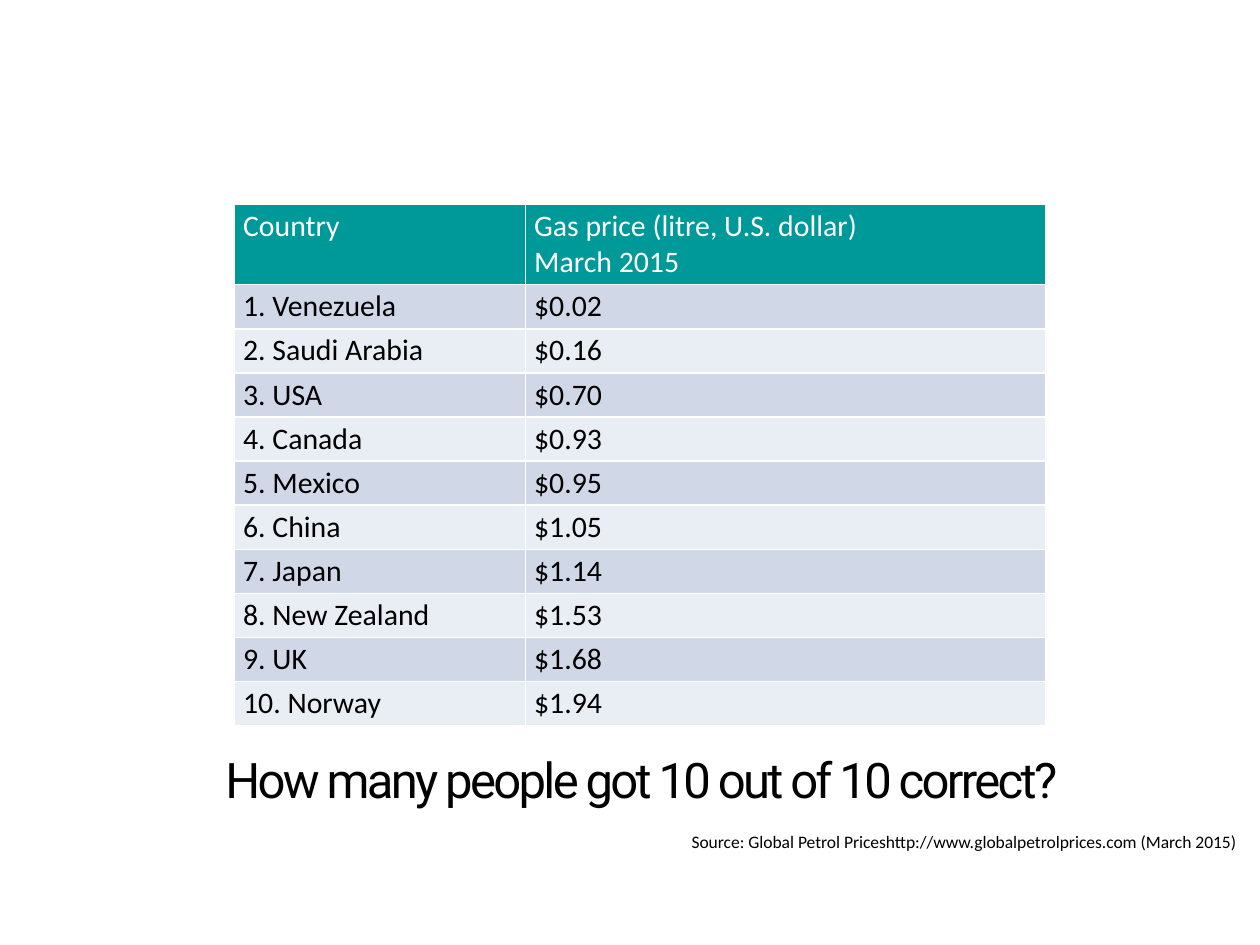
"""Build a slide with a table of gas prices by country, a question and a source line."""
import pptx
import pptx.dml.color
import pptx.enum.text
import pptx.util

PX = 9144
WHITE = pptx.dml.color.RGBColor(0xFF, 0xFF, 0xFF)
BLACK = pptx.dml.color.RGBColor(0x00, 0x00, 0x00)
TEAL = pptx.dml.color.RGBColor(0x00, 0x99, 0x99)
BANDS = [
    pptx.dml.color.RGBColor(0xE9, 0xED, 0xF4),
    pptx.dml.color.RGBColor(0xD0, 0xD8, 0xE8),
]
HEADER = ("Country", "Gas price (litre, U.S. dollar)\nMarch 2015")
PRICES = [
    ("Venezuela", "$0.02"),
    ("Saudi Arabia", "$0.16"),
    ("USA", "$0.70"),
    ("Canada", "$0.93"),
    ("Mexico", "$0.95"),
    ("China", "$1.05"),
    ("Japan", "$1.14"),
    ("New Zealand", "$1.53"),
    ("UK", "$1.68"),
    ("Norway", "$1.94"),
]
CELL_FORMAT = {
    "margin_left": 7 * PX,
    "margin_right": 7 * PX,
    "margin_top": 3 * PX,
    "margin_bottom": 3 * PX,
}


def style_span(span, name, size, color):
    values = {"name": name, "size": pptx.util.Pt(size), "bold": False}
    for key, value in values.items():
        setattr(span.font, key, value)
    span.font.color.rgb = color


def add_text(page, area, text, name, size):
    box = page.shapes.add_textbox(*[length * PX for length in area])
    box.text_frame.word_wrap = True
    para = box.text_frame.paragraphs[0]
    span = para.add_run()
    span.text = text
    style_span(span, name, size, BLACK)
    return box, para, span


deck = pptx.Presentation()
deck.slide_width = 1000 * PX
deck.slide_height = 750 * PX
page = deck.slides.add_slide(deck.slide_layouts[6])

box, para, span = add_text(
    page, (169, 592, 775, 76), "How many people got 10 out of 10 correct?", "Roboto", 28
)
para.line_spacing = pptx.util.Pt(32)
span.font._element.set("spc", "-150")

box, para, span = add_text(
    page,
    (539, 655, 709, 27),
    "Source: Global Petrol Priceshttp://www.globalpetrolprices.com (March 2015)",
    "Calibri",
    10,
)
box.text_frame.auto_size = pptx.enum.text.MSO_AUTO_SIZE.SHAPE_TO_FIT_TEXT

rows = [HEADER] + [
    (f"{rank}. {country}", price) for rank, (country, price) in enumerate(PRICES, 1)
]
frame = page.shapes.add_table(len(rows), 2, 186 * PX, 162 * PX, 644 * PX, 417 * PX)
table = frame.table
for column, width in zip(table.columns, (231, 413)):
    column.width = width * PX
for index, texts in enumerate(rows):
    table.rows[index].height = (35 if index else 64) * PX
    for cell, text in zip(table.rows[index].cells, texts):
        for key, value in CELL_FORMAT.items():
            setattr(cell, key, value)
        cell.fill.solid()
        cell.fill.fore_color.rgb = BANDS[index % 2] if index else TEAL
        cell.text_frame.text = text
        for para in cell.text_frame.paragraphs:
            for span in para.runs:
                style_span(span, "Calibri", 17, BLACK if index else WHITE)
frame.height = 417 * PX

deck.save("out.pptx")
